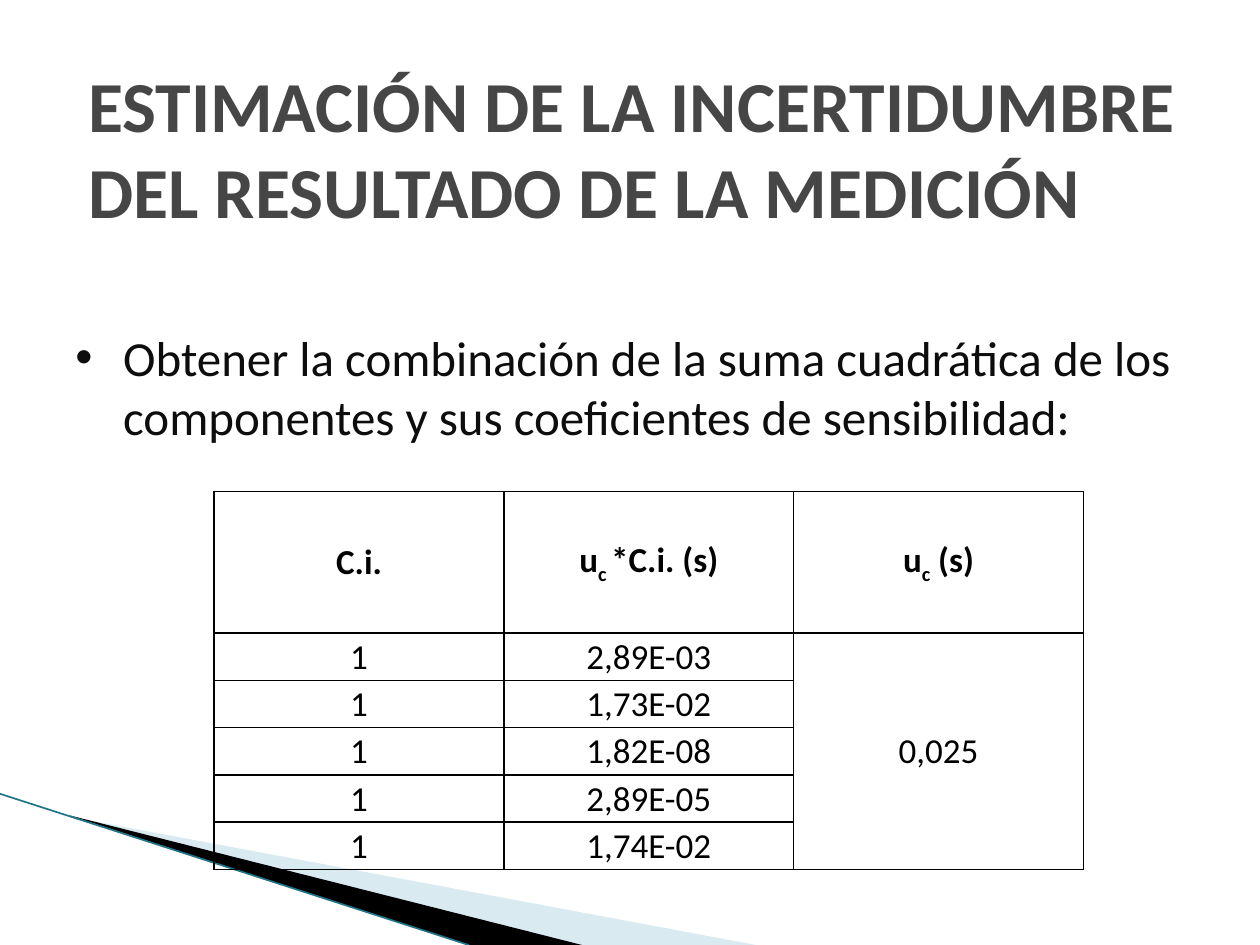
from lxml import etree
from pptx import Presentation
from pptx.dml.color import RGBColor
from pptx.enum.shapes import MSO_CONNECTOR
from pptx.enum.text import MSO_ANCHOR, MSO_AUTO_SIZE, PP_ALIGN
from pptx.oxml.ns import qn
from pptx.util import Inches, Pt

WIDTH, HEIGHT = Inches(10), Inches(7.5)
STRAIGHT = MSO_CONNECTOR.STRAIGHT
MIDDLE, TOP = MSO_ANCHOR.MIDDLE, MSO_ANCHOR.TOP
LEFT, CENTER = PP_ALIGN.LEFT, PP_ALIGN.CENTER
NO_AUTOFIT = MSO_AUTO_SIZE.NONE

FONT = "Calibri"
BLACK = RGBColor(0x00, 0x00, 0x00)
INK = RGBColor(0x0D, 0x0D, 0x0D)
TITLE_GRAY = RGBColor(0x46, 0x46, 0x46)
PALE_BLUE = RGBColor(0xA0, 0xCB, 0xDC)
TEAL = RGBColor(0x1F, 0x75, 0x88)

TITLE = "ESTIMACIÓN DE LA INCERTIDUMBRE DEL RESULTADO DE LA MEDICIÓN"
BODY = ("Obtener la combinación de la suma cuadrática de los componentes "
        "y sus coeficientes de sensibilidad:")
HEADERS = [["C.i."], ["u", "c ", "*C.i. (s)"], ["u", "c", " (s)"]]
CONTRIBUTIONS = ["2,89E-03", "1,73E-02", "1,82E-08", "2,89E-05", "1,74E-02"]
SENSITIVITY = "1"
COMBINED = "0,025"
HEADER_SHARE = 3


def region(left, top, width, height):
    """Return a box in slide units from shares of the slide's size."""
    return (int(left * WIDTH), int(top * HEIGHT),
            int(width * WIDTH), int(height * HEIGHT))


def format_runs(paragraph, size, color, bold=False):
    """Give every run of a paragraph the same font."""
    for run in paragraph.runs:
        run.font.name = FONT
        run.font.size = Pt(size)
        run.font.bold = bold
        run.font.color.rgb = color


def add_wedge(slide, box, points, color, opacity=None):
    """Draw a filled outline whose points are shares of the box."""
    left, top, width, height = box
    corners = [(left + x * width, top + y * height) for x, y in points]
    builder = slide.shapes.build_freeform(*corners[0], scale=1.0)
    builder.add_line_segments(corners[1:], close=True)
    wedge = builder.convert_to_shape()
    wedge.shadow.inherit = False
    wedge.fill.solid()
    wedge.fill.fore_color.rgb = color
    wedge.line.fill.background()
    if opacity is not None:
        fill_color = wedge.fill._xPr.find(qn("a:solidFill"))[0]
        alpha = etree.SubElement(fill_color, qn("a:alpha"))
        alpha.set("val", str(opacity * 1000))


def add_corner_decoration(slide, box):
    """Draw the two wedges and the thin line in the lower left corner."""
    left, top, width, height = box
    add_wedge(slide, box, [(0.09, 0.15), (1, 1), (0.77, 1)], PALE_BLUE, 40)
    add_wedge(slide, box, [(0.09, 0.14), (0.77, 1), (0.62, 1)], BLACK)
    edge = slide.shapes.add_connector(
        STRAIGHT, left, top, left + int(0.62 * width), top + height)
    edge.line.color.rgb = TEAL
    edge.line.width = Pt(0.95)
    etree.SubElement(edge._element.spPr, qn("a:effectLst"))


def set_title(slide, box):
    """Place and format the title placeholder."""
    title = slide.shapes.title
    title.left, title.top, title.width, title.height = box
    frame = title.text_frame
    frame.text = TITLE
    frame.word_wrap = True
    frame.auto_size = NO_AUTOFIT
    frame.vertical_anchor = MIDDLE
    paragraph = frame.paragraphs[0]
    paragraph.alignment = LEFT
    format_runs(paragraph, 41, TITLE_GRAY, bold=True)


def add_body(slide, box):
    """Add the bulleted statement."""
    frame = slide.shapes.add_textbox(*box).text_frame
    frame.word_wrap = True
    frame.auto_size = NO_AUTOFIT
    frame.vertical_anchor = TOP
    paragraph = frame.paragraphs[0]
    paragraph.text = BODY
    properties = paragraph._p.get_or_add_pPr()
    properties.set("marL", str(Inches(0.38)))
    properties.set("indent", str(-Inches(0.38)))
    etree.SubElement(properties, qn("a:buFont")).set("typeface", "Arial")
    etree.SubElement(properties, qn("a:buChar")).set("char", "•")
    format_runs(paragraph, 28, INK)


def style_cell(cell):
    """Clear a cell's fill and give it thin margins and black borders."""
    cell.fill.background()
    cell.vertical_anchor = MIDDLE
    cell.margin_left = cell.margin_right = cell.margin_top = Inches(0.01)
    cell.margin_bottom = 0
    properties = cell._tc.get_or_add_tcPr()
    for position, side in enumerate(("lnL", "lnR", "lnT", "lnB")):
        border = etree.Element(qn(f"a:{side}"), w=str(Pt(1)))
        fill = etree.SubElement(border, qn("a:solidFill"))
        etree.SubElement(fill, qn("a:srgbClr")).set("val", str(BLACK))
        properties.insert(position, border)


def write_cell(cell, parts, bold=False):
    """Write text parts in a cell, with the second one as a subscript."""
    paragraph = cell.text_frame.paragraphs[0]
    paragraph.alignment = CENTER
    for position, part in enumerate(parts):
        run = paragraph.add_run()
        run.text = part
        if position == 1:
            run.font._element.set("baseline", "-25000")
    format_runs(paragraph, 20, BLACK, bold)


def add_uncertainty_table(slide, box):
    """Add the table of contributions and the combined uncertainty."""
    left, top, width, height = box
    count = len(CONTRIBUTIONS)
    table = slide.shapes.add_table(
        count + 1, len(HEADERS), left, top, width, height).table
    table.first_row = table.horz_banding = False
    for column in table.columns:
        column.width = width // len(HEADERS)
    unit = height // (count + HEADER_SHARE)
    for index, row in enumerate(table.rows):
        row.height = unit if index else unit * HEADER_SHARE
    for cell in table.iter_cells():
        style_cell(cell)
    table.cell(1, 2).merge(table.cell(count, 2))
    for index, parts in enumerate(HEADERS):
        write_cell(table.cell(0, index), parts, bold=True)
    for index, value in enumerate(CONTRIBUTIONS, start=1):
        write_cell(table.cell(index, 0), [SENSITIVITY])
        write_cell(table.cell(index, 1), [value])
    write_cell(table.cell(1, 2), [COMBINED])


def main():
    """Build the slide and save it."""
    presentation = Presentation()
    presentation.slide_width, presentation.slide_height = WIDTH, HEIGHT
    slide = presentation.slides.add_slide(presentation.slide_layouts[5])
    add_corner_decoration(slide, region(0, 0.84, 0.6, 0.16))
    add_body(slide, region(0.05, 0.34, 0.91, 0.57))
    set_title(slide, region(0.06, 0.04, 0.91, 0.23))
    add_uncertainty_table(slide, region(0.17, 0.52, 0.69, 0.4))
    presentation.save("out.pptx")


if __name__ == "__main__":
    main()
